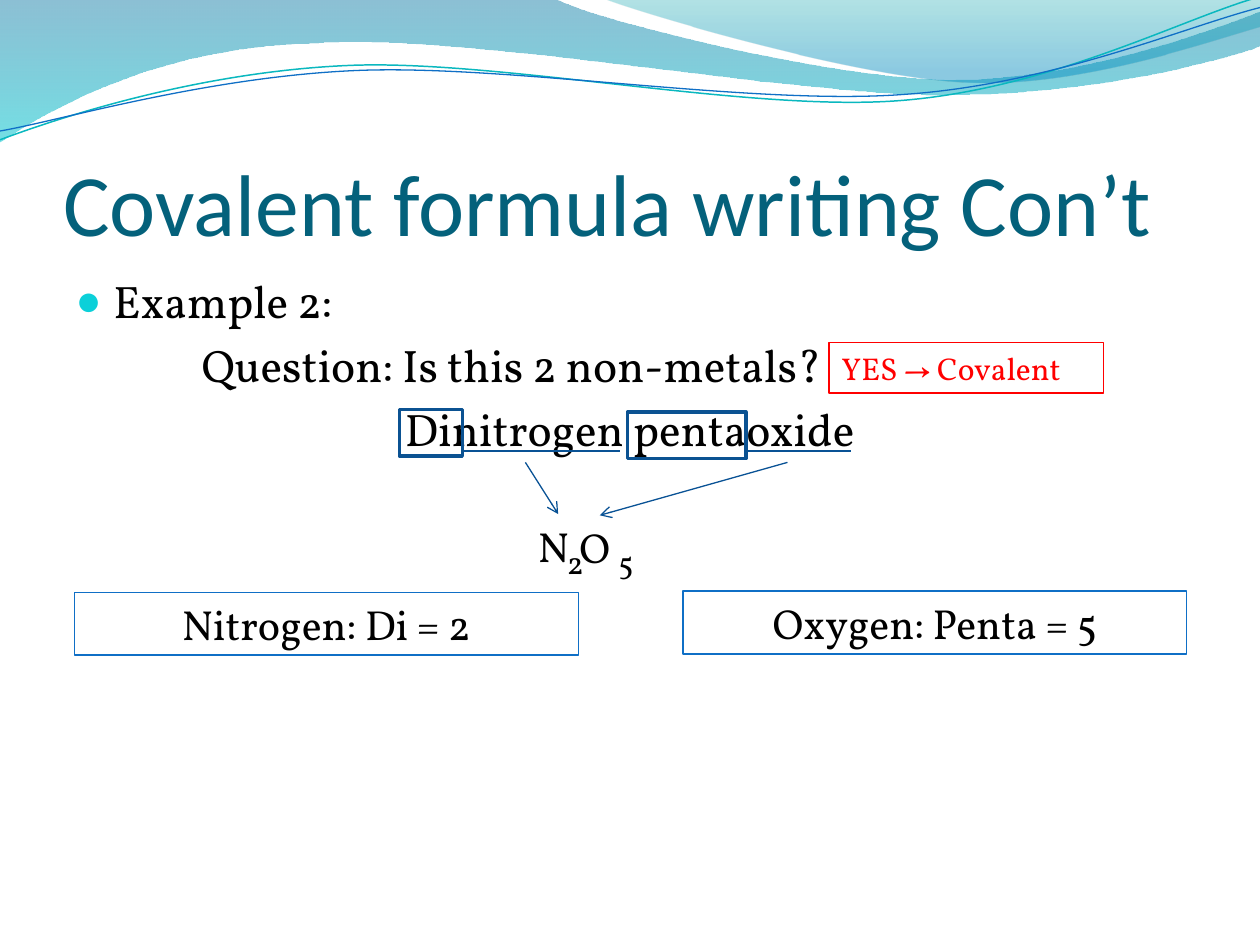
from lxml.etree import SubElement
from pptx import Presentation
from pptx.dml.color import RGBColor
from pptx.enum.shapes import MSO_CONNECTOR, MSO_SHAPE
from pptx.enum.text import MSO_ANCHOR, MSO_AUTO_SIZE, PP_ALIGN
from pptx.oxml.ns import qn
from pptx.util import Emu, Pt

SCALE = 9144
SERIF = "Vollkorn"
BLACK, RED, BLUE, NAVY = "000000", "FF0000", "0F6FC6", "095295"
GROW = {"word_wrap": True, "auto_size": MSO_AUTO_SIZE.SHAPE_TO_FIT_TEXT}


def px(n):
    """Turn px, 100 to the inch, into EMU."""
    return Emu(n * SCALE)


def tint(code):
    """Return the colour of a hex string."""
    return RGBColor.from_string(code)


def set_all(thing, form):
    """Set each attribute named in a dict."""
    for name, value in form.items():
        setattr(thing, name, value)


def place(shape, area):
    """Move and size a shape."""
    set_all(shape, dict(zip(("left", "top", "width", "height"), map(px, area))))


def shift(box, area):
    """Return an area relative to a box in slide px."""
    return (box[0] + area[0], box[1] + area[1], *area[2:])


def ink(shape, code, width):
    """Colour the line of a shape."""
    shape.line.color.rgb = tint(code)
    shape.line.width = Pt(width)


def write(para, text, size, code=BLACK, face=SERIF, align=PP_ALIGN.LEFT):
    """Put one formatted run into a paragraph."""
    para.alignment = align
    run = para.add_run()
    run.text = text
    set_all(run.font, {"size": Pt(size), "name": face})
    run.font.color.rgb = tint(code)


def label(shapes, area, text, size):
    """Add a plain text box."""
    item = shapes.add_textbox(*map(px, area))
    set_all(item.text_frame, GROW)
    write(item.text_frame.paragraphs[0], text, size)


def frame(shapes, area, code, width=0.75):
    """Add an unfilled rectangle."""
    item = shapes.add_shape(MSO_SHAPE.RECTANGLE, *map(px, area))
    item.shadow.inherit = False
    item.fill.background()
    ink(item, code, width)
    return item


def rule(shapes, box, start, end, head):
    """Add a straight line, with an arrowhead if asked."""
    ends = shift(box, start) + shift(box, end)
    item = shapes.add_connector(MSO_CONNECTOR.STRAIGHT, *map(px, ends))
    ink(item, NAVY, 0.75)
    props = item.element.find(qn("p:spPr"))
    if head:
        SubElement(props.find(qn("a:ln")), qn("a:tailEnd"), type="arrow")
    SubElement(props, qn("a:effectLst"))


def wave(shapes, box, start, parts, close):
    """Draw an outline of lines (2 numbers) and cubic curves (6 numbers)."""
    pen = shapes.build_freeform(*shift(box, start), scale=SCALE)
    knots = [spot for part in parts for spot in zip(part[::2], part[1::2])]
    pen.add_line_segments([shift(box, spot) for spot in knots], close=close)
    item = pen.convert_to_shape()
    item.shadow.inherit = False
    legs = iter(list(item.element.iter(qn("a:lnTo"))))
    for part in parts:
        leg = next(legs)
        if len(part) == 6:
            curve = SubElement(leg.getparent(), qn("a:cubicBezTo"))
            leg.getparent().replace(leg, curve)
            curve.append(leg[0])
            for _ in range(2):
                extra = next(legs)
                curve.append(extra[0])
                extra.getparent().remove(extra)
    return item


def banner(shapes, box):
    """Draw the waves along the top."""
    bands = (
        ((0, 0), ((440, -1), (476, 17, 664, 63, 758, 63), (853, 63, 958, 26, 1000, 9),
                  (1001, 36), (983, 44, 870, 76, 746, 75), (622, 75, 382, 28, 257, 34),
                  (129, 36, 46, 83, -1, 113)),
         ((0, "0074A1", 45), (1, "00C6CF", 55))),
        ((479, -1), ((509, 11, 682, 62, 769, 65), (856, 69, 961, 32, 1000, 21), (1000, 0)),
         ((0, "00A1A9", 30), (0.8, "008BBF", 45))),
    )
    for start, parts, stops in bands:
        item = wave(shapes, box, start, parts, True)
        item.line.fill.background()
        item.fill.gradient()
        item.fill.gradient_angle = 270
        for stop, (spot, code, _) in zip(item.fill.gradient_stops, stops):
            stop.position = spot
            stop.color.rgb = tint(code)
        for node, (_, _, alpha) in zip(item.element.iter(qn("a:srgbClr")), stops):
            SubElement(node, qn("a:alpha"), val=str(alpha * 1000))
    threads = (
        ((0, 111), ((48, 93, 158, 57, 277, 52), (395, 47, 593, 89, 713, 80),
                    (833, 71, 938, 15, 998, -2)), "0AB8BF", 0.85),
        ((0, 104), ((47, 96, 164, 61, 283, 56), (403, 51, 597, 84, 717, 75),
                    (836, 67, 941, 21, 1000, 6)), BLUE, 0.75),
    )
    for start, parts, code, width in threads:
        item = wave(shapes, box, start, parts, False)
        item.fill.background()
        ink(item, code, width)


def heading(shapes, box):
    """Fill the title."""
    title = shapes.title
    shapes.element.append(title.element)
    place(title, box)
    set_all(title.text_frame, {"vertical_anchor": MSO_ANCHOR.BOTTOM, "margin_left": 0,
                               "margin_right": 0, "margin_bottom": 0})
    write(title.text_frame.paragraphs[0], "Covalent formula writing Con’t", 50,
          "04617B", "Calibri")


def indent(props, left, hang):
    """Set the indents and bullet of a paragraph."""
    props.set("marL", str(px(left)))
    props.set("indent", str(px(-hang)))
    if not hang:
        SubElement(props, qn("a:buNone"))
        return
    SubElement(SubElement(props, qn("a:buClr")), qn("a:srgbClr"), val="0BD0D9")
    SubElement(props, qn("a:buSzPct"), val="95000")
    SubElement(props, qn("a:buChar"), char="●")


def outline(shapes, body, box):
    """Fill the list."""
    shapes.element.append(body.element)
    place(body, box)
    lines = (("Example 2:", 30, 30, PP_ALIGN.LEFT),
             ("Question: Is this 2 non-metals?", 100, 0, PP_ALIGN.LEFT),
             ("Dinitrogen pentaoxide", 0, 0, PP_ALIGN.CENTER))
    body.text_frame.text = "\n" * (len(lines) - 1)
    for para, (text, _, _, align) in zip(body.text_frame.paragraphs, lines):
        write(para, text, 26, align=align)
    for props, (_, left, hang, _) in zip(body.element.iter(qn("a:pPr")), lines):
        indent(props, left, hang)


def formula(shapes, box):
    """Mark the name's parts and lead them to the formula."""
    for area, text, size in (((100, 83, 52, 50), "N", 24), ((133, 84, 52, 50), "O", 24),
                             ((164, 101, 52, 40), "5", 18), ((123, 101, 52, 40), "2", 18)):
        label(shapes, shift(box, area), text, size)
    for start, end, head in (((100, 42), (126, 83), True), ((308, 42), (159, 84), True),
                             ((50, 33), (175, 33), False), ((275, 33), (358, 33), False)):
        rule(shapes, box, start, end, head)
    for area in ((0, 0, 50, 37), (181, 2, 94, 37)):
        frame(shapes, shift(box, area), "0B5292", 2)


def answer(shapes, box, text, size=24, code=BLACK, edge=BLUE, align=PP_ALIGN.CENTER):
    """Write a line of text in a frame."""
    item = frame(shapes, box, edge)
    set_all(item.text_frame, {"vertical_anchor": MSO_ANCHOR.TOP, **GROW})
    write(item.text_frame.paragraphs[0], text, size, code, align=align)


def main():
    """Build and save the slide."""
    deck = Presentation()
    set_all(deck, {"slide_width": px(1000), "slide_height": px(750)})
    slide = deck.slides.add_slide(deck.slide_layouts[1])
    shapes = slide.shapes
    banner(shapes, (0, 0, 1000, 114))
    heading(shapes, (50, 77, 900, 125))
    outline(shapes, slide.placeholders[1], (50, 212, 900, 480))
    formula(shapes, (317, 325, 358, 141))
    answer(shapes, (59, 470, 400, 50), "Nitrogen: Di = 2")
    answer(shapes, (542, 469, 400, 50), "Oxygen: Penta = 5")
    answer(shapes, (658, 272, 218, 40), "YES → Covalent", 18, RED, RED, PP_ALIGN.LEFT)
    deck.save("out.pptx")


if __name__ == "__main__":
    main()
